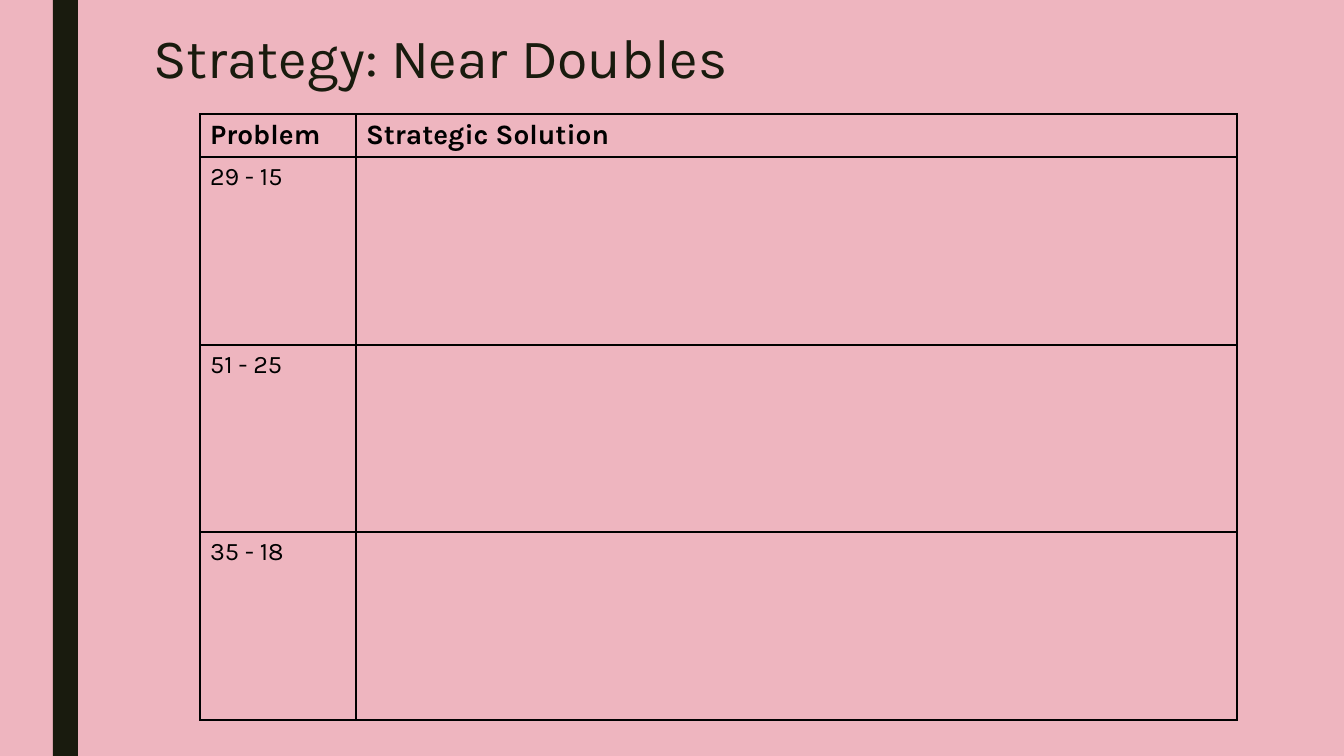
import dataclasses

import lxml.etree
import pptx
import pptx.dml.color
import pptx.enum.shapes
import pptx.enum.text
import pptx.oxml.ns
import pptx.slide
import pptx.table
import pptx.text.text
import pptx.util

PX = 914400 / 100.8
TITLE_ONLY = 5


@dataclasses.dataclass(frozen=True)
class Theme:
    background: str = "EEB5BF"
    dark: str = "191B0E"
    black: str = "000000"
    font: str = "Karla"
    title_size: float = 39.6
    header_size: float = 20
    body_size: float = 18
    border_width: float = 1


@dataclasses.dataclass(frozen=True)
class Area:
    left: int
    top: int
    width: int
    height: int

    def emu(self) -> dict[str, int]:
        return {name: px(value) for name, value in dataclasses.asdict(self).items()}


THEME = Theme()
PAGE = Area(0, 0, 1344, 756)
BAR = Area(53, 0, 25, 756)
TITLE = Area(143, 23, 1058, 76)
TABLE = Area(200, 114, 1037, 606)
COLUMN_WIDTHS = (156, 881)
ROW_HEIGHTS = (43, 188, 187, 188)
HEADERS = ("Problem", "Strategic Solution")
PROBLEMS = ("29 - 15", "51 - 25", "35 - 18")


def px(length: int) -> int:
    return round(length * PX)


def rgb(colour: str) -> pptx.dml.color.RGBColor:
    return pptx.dml.color.RGBColor.from_string(colour)


def write(para: pptx.text.text._Paragraph, text: str, size: float,
          colour: str, bold: bool = False) -> None:
    span = para.add_run()
    span.text = text
    formats = {"name": THEME.font, "size": pptx.util.Pt(size), "bold": bold}
    for name, value in formats.items():
        setattr(span.font, name, value)
    span.font.color.rgb = rgb(colour)


def add_bar(page: pptx.slide.Slide) -> None:
    bar = page.shapes.add_shape(
        pptx.enum.shapes.MSO_SHAPE.RECTANGLE, **BAR.emu())
    bar.shadow.inherit = False
    bar.fill.solid()
    bar.fill.fore_color.rgb = rgb(THEME.dark)
    bar.line.fill.background()


def add_title(page: pptx.slide.Slide) -> None:
    title = page.shapes.title
    for name, value in TITLE.emu().items():
        setattr(title, name, value)
    formats = {
        "word_wrap": True,
        "auto_size": pptx.enum.text.MSO_AUTO_SIZE.NONE,
        "vertical_anchor": pptx.enum.text.MSO_ANCHOR.MIDDLE,
    }
    for name, value in formats.items():
        setattr(title.text_frame, name, value)
    para = title.text_frame.paragraphs[0]
    para.alignment = pptx.enum.text.PP_ALIGN.LEFT
    para.line_spacing = 0.89
    write(para, "Strategy: Near Doubles", THEME.title_size, THEME.dark)


def add_borders(cell: pptx.table._Cell) -> None:
    """Draw a solid line on all four sides; call before the fill is set."""
    qn = pptx.oxml.ns.qn
    properties = cell._tc.get_or_add_tcPr()
    for side in ("a:lnL", "a:lnR", "a:lnT", "a:lnB"):
        line = lxml.etree.SubElement(
            properties, qn(side), w=str(pptx.util.Pt(THEME.border_width)))
        fill = lxml.etree.SubElement(line, qn("a:solidFill"))
        lxml.etree.SubElement(fill, qn("a:srgbClr"), val=THEME.black)


def add_problem_table(page: pptx.slide.Slide) -> None:
    rows = [HEADERS] + [(problem, "") for problem in PROBLEMS]
    table = page.shapes.add_table(len(rows), len(HEADERS), **TABLE.emu()).table
    table.horz_banding = False
    for column, width in zip(table.columns, COLUMN_WIDTHS):
        column.width = px(width)
    for row, height in zip(table.rows, ROW_HEIGHTS):
        row.height = px(height)
    for row_index, texts in enumerate(rows):
        is_header = row_index == 0
        size = THEME.header_size if is_header else THEME.body_size
        for column_index, text in enumerate(texts):
            cell = table.cell(row_index, column_index)
            add_borders(cell)
            cell.fill.background()
            if text:
                write(cell.text_frame.paragraphs[0], text, size,
                      THEME.black, is_header)


def main() -> None:
    deck = pptx.Presentation()
    deck.slide_width, deck.slide_height = px(PAGE.width), px(PAGE.height)
    page = deck.slides.add_slide(deck.slide_layouts[TITLE_ONLY])
    page.background.fill.solid()
    page.background.fill.fore_color.rgb = rgb(THEME.background)
    add_bar(page)
    add_title(page)
    add_problem_table(page)
    deck.save("out.pptx")


if __name__ == "__main__":
    main()
